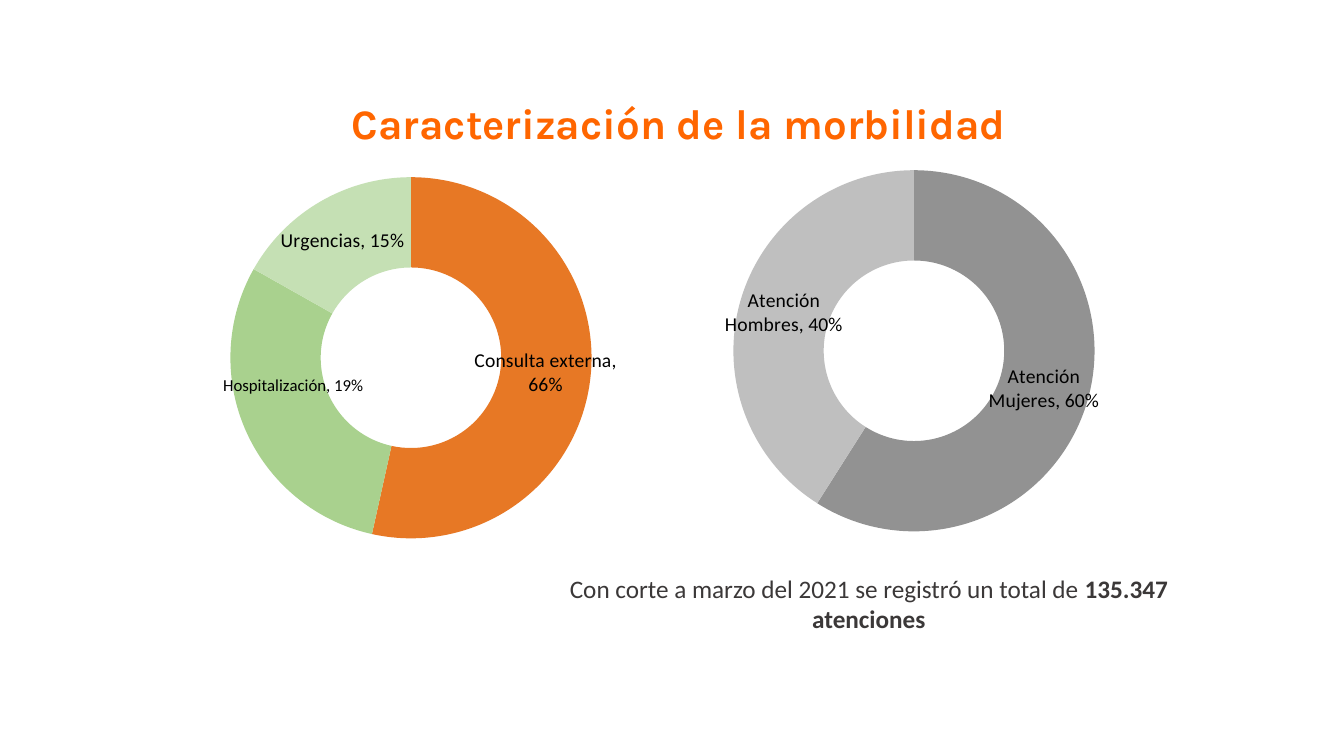
from lxml import etree
from pptx import Presentation
from pptx.chart.data import CategoryChartData
from pptx.dml.color import RGBColor
from pptx.enum import chart as ch, text
from pptx.oxml import ns
from pptx.util import Pt

ORANGE = RGBColor(0xFF, 0x66, 0x00)
CHARCOAL = RGBColor(0x3B, 0x38, 0x38)
BLACK = RGBColor(0, 0, 0)
RUST = RGBColor(0xE7, 0x78, 0x25)
GREEN = RGBColor(0xA9, 0xD1, 0x8E)
PALE_GREEN = RGBColor(0xC5, 0xE0, 0xB4)
GREY = RGBColor(0x92, 0x92, 0x92)
PALE_GREY = RGBColor(0xBF, 0xBF, 0xBF)

# Content
HEADING = "Caracterización de la morbilidad"
TOTAL = [("Con corte a marzo del 2021 se registró un total de ", False),
         ("135.347 atenciones", True)]
# Each slice: category, value, shown share, colour, label size, label shift
SERVICES = [("Consulta externa", 0.54, "66%", RUST, 14, None),
            ("Hospitalización", 0.3, "19%", GREEN, 12, (0.01, -0.07)),
            ("Urgencias", 0.17, "15%", PALE_GREEN, 14, None)]
SEXES = [("Atención Mujeres", 0.59, "60%", GREY, 14, None),
         ("Atención Hombres", 0.41, "40%", PALE_GREY, 14, None)]
# Each ring: slices, chart frame, horizontal centre of the ring
RINGS = [(SERVICES, (82.8, 116.6, 425.5, 278), 293.6),
         (SEXES, (451.4, 111.6, 402.5, 278), 652.9)]
RING_SIZE = 258


def points(*lengths):
    return [Pt(length) for length in lengths]


def add_run(paragraph, words, size, colour, face, bold=False):
    run = paragraph.add_run()
    run.text = words
    run.font.size, run.font.name, run.font.bold = Pt(size), face, bold
    run.font.color.rgb = colour


def manual_layout(**settings):
    layout = etree.Element(ns.qn("c:layout"))
    manual = etree.SubElement(layout, ns.qn("c:manualLayout"))
    for tag, value in settings.items():
        etree.SubElement(manual, ns.qn("c:" + tag)).set("val", str(value))
    return layout


def add_ring(slices, frame, centre):
    data = CategoryChartData(number_format="0%")
    data.categories = [row[0] for row in slices]
    data.add_series("Series 1", [row[1] for row in slices])
    ring = slide.shapes.add_chart(
        ch.XL_CHART_TYPE.DOUGHNUT, *points(*frame), data).chart
    ring.has_legend = ring.has_title = False
    ring.font.name, ring.font.size = "Calibri", Pt(14)
    ring.font.color.rgb = BLACK

    # Ring centred in its frame
    left, top, width, height = frame
    w, h = RING_SIZE / width, RING_SIZE / height
    area = ring._chartSpace.chart.plotArea
    for old in area.findall(ns.qn("c:layout")):
        area.remove(old)
    area.insert(0, manual_layout(
        layoutTarget="inner", xMode="edge", yMode="edge",
        x=round((centre - left) / width - w / 2, 4),
        y=round((1 - h) / 2, 4), w=round(w, 4), h=round(h, 4)))

    # Slice colours and labels
    plot = ring.plots[0]
    plot.vary_by_categories = True
    plot._element.find(ns.qn("c:holeSize")).set("val", "50")
    labels = plot.series[0].data_labels
    labels.show_value = labels.show_category_name = True
    labels.number_format, labels.number_format_is_linked = "0%", False
    labels.font.size, labels.font.name = Pt(14), "Calibri"
    for i, (category, _, share, colour, size, shift) in enumerate(slices):
        part = plot.series[0].points[i]
        part.format.fill.solid()
        part.format.fill.fore_color.rgb = colour
        part.format.line.fill.background()
        label = part.data_label
        add_run(label.text_frame.paragraphs[0], f"{category}, {share}",
                size, BLACK, "Calibri")
        if shift:
            label._dLbl.insert(1, manual_layout(x=shift[0], y=shift[1]))


deck = Presentation()
deck.slide_width, deck.slide_height = Pt(960), Pt(540)
slide = deck.slides.add_slide(deck.slide_layouts[5])

# Heading
heading = slide.shapes.title
heading.left, heading.top, heading.width, heading.height = points(
    168.5, 66.2, 612, 44)
heading.text_frame.auto_size = text.MSO_AUTO_SIZE.NONE
heading.text_frame.vertical_anchor = text.MSO_ANCHOR.TOP
line = heading.text_frame.paragraphs[0]
line.alignment = text.PP_ALIGN.CENTER
line._p.get_or_add_pPr().set("marL", str(Pt(21)))
add_run(line, HEADING, 30, ORANGE, "Karla", True)

# Doughnuts
for ring_parts in RINGS:
    add_ring(*ring_parts)

# Total of attentions
total = slide.shapes.add_textbox(*points(395.3, 406, 450.7, 51)).text_frame
total.word_wrap = True
total.paragraphs[0].alignment = text.PP_ALIGN.CENTER
for words, bold in TOTAL:
    add_run(total.paragraphs[0], words, 18, CHARCOAL, "Calibri", bold)

deck.save("out.pptx")
